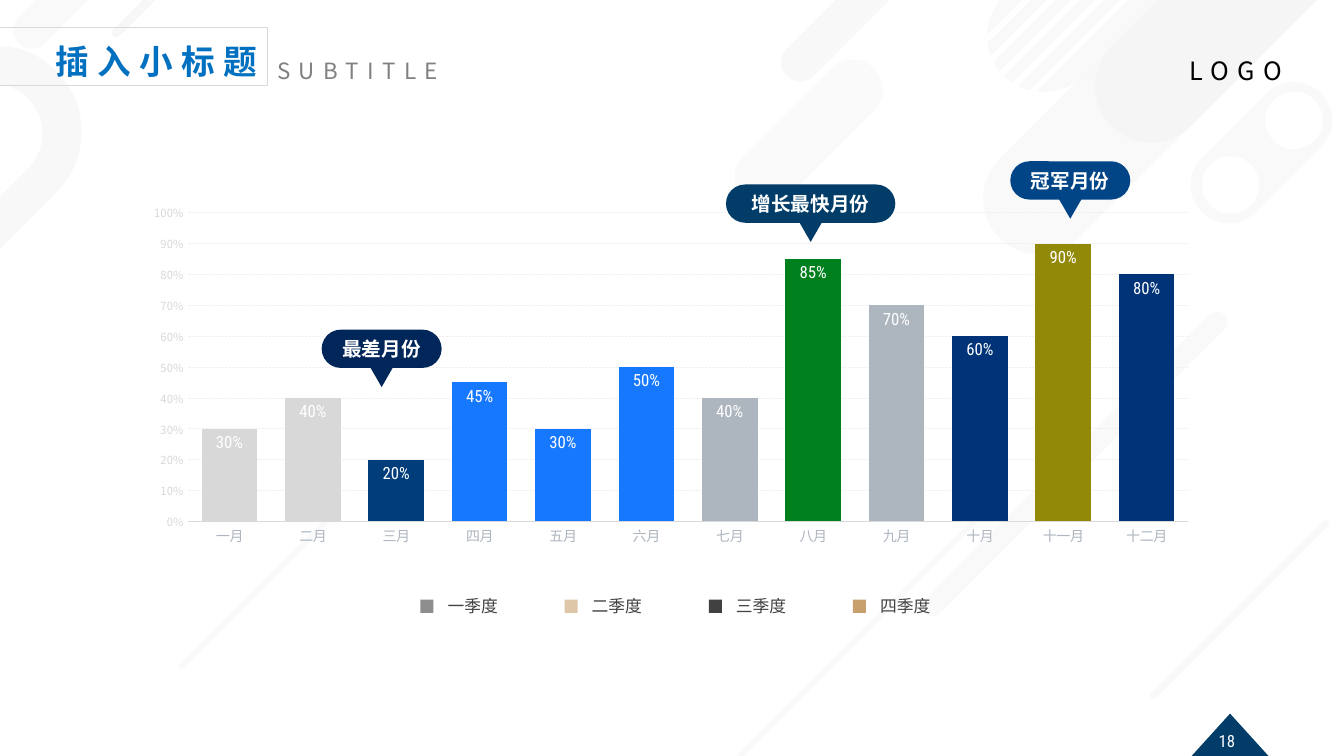
from lxml import etree
from pptx import Presentation
from pptx.chart.data import CategoryChartData
from pptx.dml.color import RGBColor
from pptx.enum.chart import XL_CHART_TYPE as ChartType, XL_LABEL_POSITION as LabelPos, XL_TICK_MARK as Tick
from pptx.enum.dml import MSO_LINE as Dash
from pptx.enum.shapes import MSO_SHAPE as Shape
from pptx.enum.text import MSO_ANCHOR as Anchor, PP_ALIGN as Align
from pptx.oxml import parse_xml
from pptx.oxml.ns import nsdecls, qn
from pptx.util import Pt

# Content: lengths in px, 100 to the inch
SCALE = 9144
CJK, CJK_JP, ROBOTO = "Noto Sans CJK SC", "Noto Sans CJK JP", "Roboto Condensed"
PALE, WHITE = "F2F2F2", "FFFFFF"

# Diagonal bars: left, top, width, height, opacity %
BIG_BARS = [(1153, -288, 111, 614, 46), (1264, -399, 111, 614, 50),
            (1157, -449, 111, 614, 45), (1213, 68, 76, 167, 40)]
HOLES = [(1255, 91), (1192, 155)]
HOLE_SIZE = 57
STRIPES = dict(left=969, top=-239, width=6, height=570, step=24.25, count=5)
SMALL_BARS = [(253, 476, 5, 219, 45), (829, 444, 5, 417, 40), (1056, 251, 20, 419, 40),
              (772, 41, 60, 183, 37), (826, -81, 38, 183, 50), (1226, 480, 7, 249, 40),
              (157, -83, 9, 139, 60), (49, -75, 37, 138, 40)]
# Ring cut by the left edge: two points are a line, six numbers a curve
RING = [(8, 46), (20, 48, 32, 52, 42, 59), (56, 70), (67, 84), (89, 117, 85, 162, 56, 191),
        (0, 247), (0, 195), (28, 167), (47, 148, 47, 117, 28, 98), (21, 91, 12, 86, 3, 84), (0, 84)]

MONTHS = [  # name, value, colour
    ("一月", 0.3, "D8D8D8"), ("二月", 0.4, "D8D8D8"), ("三月", 0.2, "003D7A"),
    ("四月", 0.45, "1578FF"), ("五月", 0.3, "1578FF"), ("六月", 0.5, "1578FF"),
    ("七月", 0.4, "ADB5BF"), ("八月", 0.85, "007F1D"), ("九月", 0.7, "ADB5BF"),
    ("十月", 0.6, "003378"), ("十一月", 0.9, "938909"), ("十二月", 0.8, "003378")]
CALLOUTS = [  # text, left, top, width, colour
    ("冠军月份", 1002, 160, 119, "014586"),
    ("增长最快月份", 720, 183, 168, "013D68"),
    ("最差月份", 319, 327, 119, "00265A")]
QUARTERS = [("一季度", "8D8D8D"), ("二季度", "DEC6A8"), ("三季度", "414141"), ("四季度", "C8A06E")]
LEGEND_LEFT, LEGEND_STEP = 417, 143

deck = Presentation()
deck.slide_width, deck.slide_height = 1333 * SCALE, 750 * SCALE
page = deck.slides.add_slide(deck.slide_layouts[6])


def emu(*lengths):
    return [round(length * SCALE) for length in lengths]


def color(hex_code):
    return RGBColor.from_string(hex_code)


def paint(shape, fill=None, opacity=100, line=None):
    shape.shadow.inherit = False
    if fill:
        shape.fill.solid()
        shape.fill.fore_color.rgb = color(fill)
        if opacity < 100:
            tint = shape.fill._xPr.find(".//" + qn("a:srgbClr"))
            etree.SubElement(tint, qn("a:alpha")).set("val", str(opacity * 1000))
    else:
        shape.fill.background()
    if line:
        shape.line.color.rgb = color(line)
        shape.line.width = Pt(0.75)
    else:
        shape.line.fill.background()
    return shape


def add_box(kind, left, top, width, height, fill=None, opacity=100, line=None, turn=0):
    box = page.shapes.add_shape(kind, *emu(left, top, width, height))
    box.rotation = turn
    if kind == Shape.ROUNDED_RECTANGLE:
        box.adjustments[0] = 0.5
    return paint(box, fill, opacity, line)


def add_bar(left, top, width, height, opacity=100, fill=PALE):
    add_box(Shape.ROUNDED_RECTANGLE, left, top, width, height, fill, opacity, turn=45)


def write(box, text, size, font, hex_code, bold=False, spacing=0,
          align=Align.LEFT, anchor=Anchor.TOP, wrap=True):
    frame = box.text_frame
    frame.word_wrap = wrap
    frame.vertical_anchor = anchor
    para = frame.paragraphs[0]
    para.alignment = align
    span = para.add_run()
    span.text = text
    span.font.size, span.font.name, span.font.bold = Pt(size), font, bold
    span.font.color.rgb = color(hex_code)
    props = span.font._element
    if spacing:
        props.set("spc", str(spacing * 100))
    east = etree.SubElement(props, qn("a:ea"))
    east.set("typeface", CJK if font == ROBOTO else font)


def add_label(left, top, width, height, *args, **kwargs):
    box = page.shapes.add_textbox(*emu(left, top, width, height))
    write(box, *args, **kwargs)


def curve_points(start, curve, steps=16):
    x1, y1, x2, y2, x3, y3 = curve
    for i in range(1, steps + 1):
        t = i / steps
        s = 1 - t
        yield tuple(s**3 * a + 3 * s * s * t * b + 3 * s * t * t * c + t**3 * d
                    for a, b, c, d in zip(start, (x1, y1), (x2, y2), (x3, y3)))


# Page number
add_box(Shape.ISOSCELES_TRIANGLE, 1181, 708, 78, 43, "013D68")
add_label(1178, 721, 57, 28, "18", 12, ROBOTO, WHITE, align=Align.RIGHT, anchor=Anchor.MIDDLE)

# Background decoration
outline = [(0, 46)]
for step in RING:
    outline += [step] if len(step) == 2 else curve_points(outline[-1], step)
ring = page.shapes.build_freeform(*emu(*outline[0]), scale=1.0)
ring.add_line_segments([emu(*point) for point in outline[1:]], close=True)
paint(ring.convert_to_shape(), PALE, 50)
for bar in BIG_BARS:
    add_bar(*bar)
for left, top in HOLES:
    add_box(Shape.OVAL, left, top, HOLE_SIZE, HOLE_SIZE, WHITE)
for i in range(STRIPES["count"]):
    add_bar(STRIPES["left"] + i * STRIPES["step"], STRIPES["top"],
            STRIPES["width"], STRIPES["height"], fill=WHITE)
for bar in SMALL_BARS:
    add_bar(*bar)

# Header
title = add_box(Shape.RECTANGLE, -113, 27, 378, 58, line="D9D9D9")
write(title, "插入小标题", 24, CJK, "0070C0", True, 6, Align.RIGHT, Anchor.BOTTOM)
add_label(265, 52, 188, 37, "SUBTITLE", 16, CJK_JP, "808080", spacing=6, wrap=False)
add_label(1170, 50, 126, 40, "LOGO", 18, CJK, "000000", spacing=6, wrap=False)

# Monthly chart
data = CategoryChartData(number_format="0%")
data.categories = [name for name, _, _ in MONTHS]
data.add_series("Series 1", [value for _, value, _ in MONTHS])
chart = page.shapes.add_chart(ChartType.COLUMN_CLUSTERED, *emu(133, 197, 1067, 352), data).chart
chart.has_legend = chart.has_title = False
chart.font.name, chart.font.size = CJK, Pt(10)
plot = chart.plots[0]
plot.gap_width, plot.overlap, plot.vary_by_categories = 50, 1, False
for i, (_, _, hex_code) in enumerate(MONTHS):
    fill = plot.series[0].points[i].format.fill
    fill.solid()
    fill.fore_color.rgb = color(hex_code)

plot.has_data_labels = True
labels = plot.data_labels
labels.show_value, labels.position = True, LabelPos.INSIDE_END
labels.number_format, labels.number_format_is_linked = "0%", False
labels.font.name, labels.font.size = ROBOTO, Pt(12)
labels.font.color.rgb = color(WHITE)

months, percents = chart.category_axis, chart.value_axis
for axis, size, hex_code in ((months, 10, "ADB5BF"), (percents, 8, "D8D8D8")):
    axis.major_tick_mark = axis.minor_tick_mark = Tick.NONE
    axis.tick_labels.font.name, axis.tick_labels.font.size = CJK, Pt(size)
    axis.tick_labels.font.color.rgb = color(hex_code)
months.format.line.color.rgb = color("D9D9D9")
months.format.line.width = Pt(0.75)
percents.format.line.fill.background()
percents.minimum_scale, percents.maximum_scale, percents.major_unit = 0, 1, 0.1
percents.tick_labels.number_format = "0%"
percents.tick_labels.number_format_is_linked = False
grid = percents.major_gridlines.format.line
grid.color.rgb, grid.width, grid.dash_style = color("F0F0F0"), Pt(0.5), Dash.ROUND_DOT

# Fixed inner plot area
area = chart.element.find(".//" + qn("c:plotArea"))
for layout in area.findall(qn("c:layout")):
    area.remove(layout)
fields = [("layoutTarget", "inner"), ("xMode", "edge"), ("yMode", "edge"),
          ("x", 0.05), ("y", 0.04), ("w", 0.93), ("h", 0.87)]
inner = "".join(f'<c:{name} val="{value}"/>' for name, value in fields)
area.insert(0, parse_xml(f'<c:layout {nsdecls("c")}><c:manualLayout>{inner}</c:manualLayout></c:layout>'))

# Callouts
for text, left, top, width, hex_code in CALLOUTS:
    bubble = add_box(Shape.ROUNDED_RECTANGLE, left, top, width, 38, hex_code)
    write(bubble, text, 14, ROBOTO, WHITE, True, align=Align.CENTER, anchor=Anchor.MIDDLE, wrap=False)
    add_box(Shape.ISOSCELES_TRIANGLE, left + (width - 23) / 2, top + 37, 23, 20, hex_code, turn=180)

# Legend
for i, (text, hex_code) in enumerate(QUARTERS):
    left = LEGEND_LEFT + i * LEGEND_STEP
    add_box(Shape.RECTANGLE, left, 595, 13, 13, hex_code)
    add_label(left + 17, 586, 71, 30, text, 12, ROBOTO, "414141", wrap=False)

deck.save("out.pptx")
